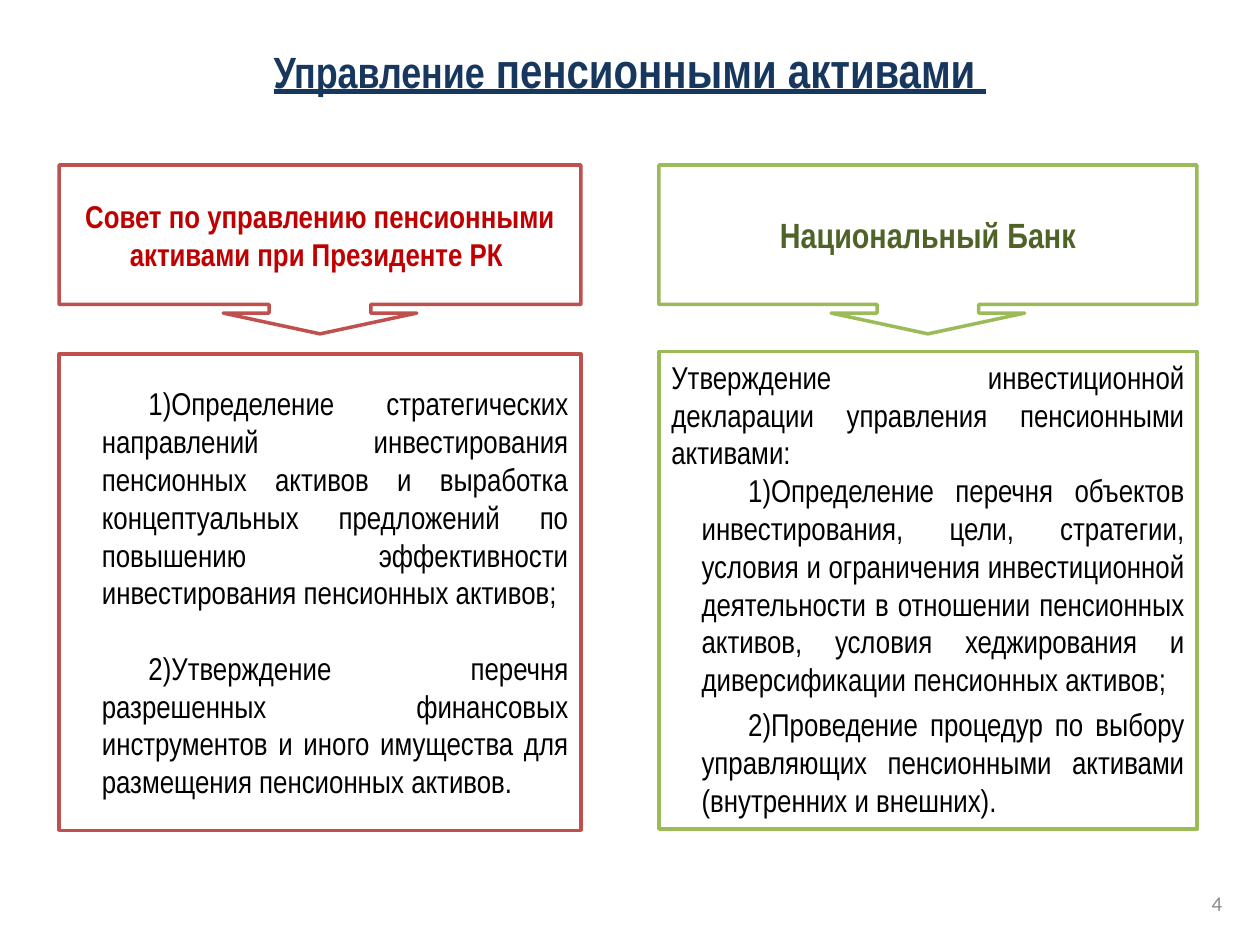
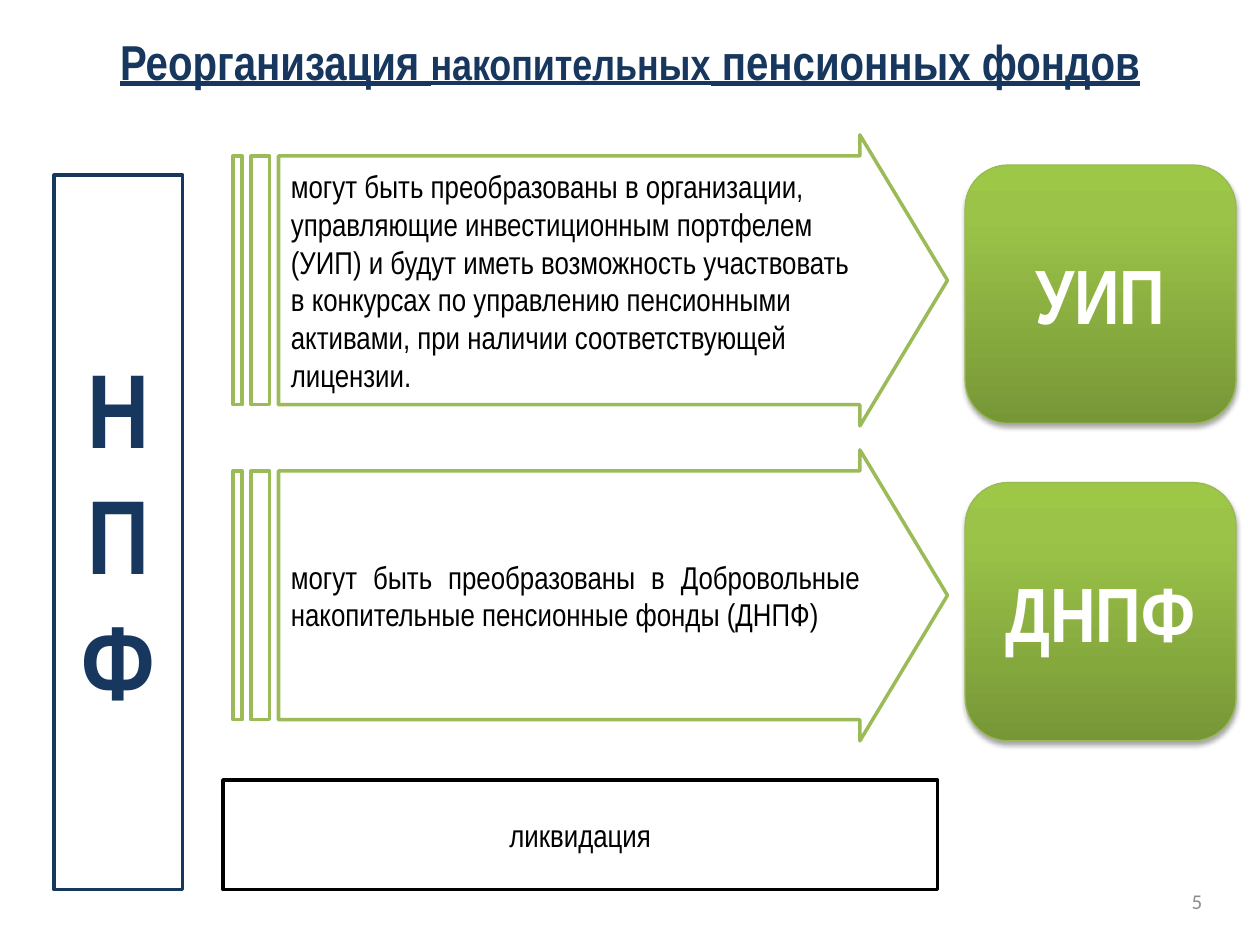
from collections import namedtuple
from dataclasses import dataclass

from lxml.etree import SubElement
from pptx import Presentation
from pptx.dml.color import RGBColor
from pptx.enum.shapes import MSO_SHAPE
from pptx.enum.text import MSO_ANCHOR, MSO_AUTO_SIZE, PP_ALIGN
from pptx.oxml import parse_xml
from pptx.oxml.ns import nsdecls, qn
from pptx.util import Inches, Pt

Box = namedtuple("Box", "left top width height")


@dataclass(frozen=True)
class Theme:
    font: str = "Arial Narrow"
    number_font: str = "Calibri"
    navy: str = "17375E"
    red: str = "C0504D"
    dark_red: str = "C00000"
    green: str = "9BBB59"
    dark_green: str = "4F6228"
    badge_edge: str = "98B955"
    badge_stops: tuple = ((0, "779737"), (80, "9BC348"), (100, "9DC746"))
    black: str = "000000"
    white: str = "FFFFFF"
    gray: str = "8C8C8C"
    title: float = 28
    title_small: float = 25
    body: float = 18
    heading: float = 20
    badge: float = 44
    fund: float = 60
    number: float = 12
    outline: float = 2


THEME = Theme()


def rgb(code):
    return RGBColor.from_string(code)


def inches(box):
    return [Inches(length) for length in box]


def style(paragraph, size, color, bold=False, align=PP_ALIGN.CENTER, font=THEME.font):
    paragraph.alignment = align
    paragraph.font.name = font
    paragraph.font.size = Pt(size)
    paragraph.font.bold = bold
    paragraph.font.color.rgb = rgb(color)


def add_panel(slide, kind, box, edge, adjustments=(), weight=THEME.outline):
    """Add a white outlined shape with no shadow."""
    panel = slide.shapes.add_shape(kind, *inches(box))
    for index, value in enumerate(adjustments):
        panel.adjustments[index] = value
    panel.shadow.inherit = False
    panel.fill.solid()
    panel.fill.fore_color.rgb = rgb(THEME.white)
    panel.line.color.rgb = rgb(edge)
    panel.line.width = Pt(weight)
    panel.text_frame.word_wrap = True
    panel.text_frame.vertical_anchor = MSO_ANCHOR.MIDDLE
    return panel


def write(panel, text, size, color, **options):
    paragraph = panel.text_frame.paragraphs[0]
    paragraph.text = text
    style(paragraph, size, color, **options)


def number_item(paragraph):
    properties = paragraph._p.get_or_add_pPr()
    properties.set("marL", str(Inches(0.24)))
    properties.set("indent", str(Inches(0.37)))
    SubElement(properties, qn("a:buFont"), typeface="+mj-lt")
    SubElement(properties, qn("a:buAutoNum"), type="arabicParenR")


def add_title(slide, box, parts):
    """Fill the title with (text, size) parts."""
    title = slide.shapes.title
    title.left, title.top, title.width, title.height = inches(box)
    title.text_frame.vertical_anchor = MSO_ANCHOR.MIDDLE
    paragraph = title.text_frame.paragraphs[0]
    style(paragraph, THEME.title, THEME.navy, bold=True)
    paragraph.font.underline = True
    for text, size in parts:
        run = paragraph.add_run()
        run.text = text
        run.font.size = Pt(size)


def add_page_number(slide, left, top, number):
    holder = slide.shapes.add_textbox(*inches(Box(left, top, 2.33, 0.4)))
    holder.text_frame.word_wrap = True
    holder.text_frame.vertical_anchor = MSO_ANCHOR.MIDDLE
    write(holder, str(number), THEME.number, THEME.gray,
          align=PP_ALIGN.RIGHT, font=THEME.number_font)


def add_duties(slide, box, edge, duties, gap, intro=None):
    """Add a frame with an optional opening line and numbered duties."""
    panel = add_panel(slide, MSO_SHAPE.RECTANGLE, box, edge)
    frame = panel.text_frame
    if intro:
        frame.vertical_anchor = MSO_ANCHOR.TOP
        frame.auto_size = MSO_AUTO_SIZE.SHAPE_TO_FIT_TEXT
    lines = ([intro] if intro else []) + duties
    for index, text in enumerate(lines):
        paragraph = frame.paragraphs[0] if index == 0 else frame.add_paragraph()
        paragraph.text = text
        style(paragraph, THEME.body, THEME.black, align=PP_ALIGN.JUSTIFY)
        if text in duties:
            if text != duties[-1]:
                paragraph.space_after = Pt(gap)
            number_item(paragraph)


def add_authority(slide, box, edge, name, name_size, name_color, duties_top, **duties):
    """Add a callout with the authority's name above the frame of its duties."""
    add_duties(slide, Box(box.left, box.top + duties_top, box.width,
                          box.height - duties_top), edge, **duties)
    callout = add_panel(slide, MSO_SHAPE.DOWN_ARROW_CALLOUT, box._replace(height=1.34),
                        edge, (0.602, 0.573, 0.123, 0.826))
    write(callout, name, name_size, name_color, bold=True)


def add_badge(slide, box, text):
    badge = add_panel(slide, MSO_SHAPE.ROUNDED_RECTANGLE, box, THEME.badge_edge, weight=0.75)
    stops = "".join(f'<a:gs pos="{position * 1000}"><a:srgbClr val="{color}"/></a:gs>'
                    for position, color in THEME.badge_stops)
    gradient = parse_xml(f'<a:gradFill {nsdecls("a")} rotWithShape="1"><a:gsLst>{stops}</a:gsLst>'
                         '<a:lin ang="16200000" scaled="0"/></a:gradFill>')
    properties = badge._element.spPr
    properties.replace(properties.find(qn("a:solidFill")), gradient)
    shadow = SubElement(properties.find(qn("a:effectLst")), qn("a:outerShdw"),
                        blurRad=str(Pt(3.1)), dist=str(Pt(1.8)), dir="5400000", rotWithShape="0")
    color = SubElement(shadow, qn("a:srgbClr"), val=THEME.black)
    SubElement(color, qn("a:alpha"), val="35000")
    write(badge, text, THEME.badge, THEME.white, bold=True)


def add_outcome(slide, box, text, align, badge_text, badge_drop):
    """Add a striped arrow that leads to a badge on its right."""
    arrow = add_panel(slide, MSO_SHAPE.STRIPED_RIGHT_ARROW, box._replace(width=5.67),
                      THEME.green, (0.855, 0.301))
    write(arrow, text, THEME.body, THEME.black, align=align)
    badge_width = 2.15
    add_badge(slide, Box(box.left + box.width - badge_width, box.top + badge_drop,
                         badge_width, 2.05), badge_text)


def build_management(slide):
    add_title(slide, Box(0.5, 0.2, 9, 0.7),
              [("Управление", THEME.title_small), (" пенсионными активами ", THEME.title)])
    add_authority(
        slide, Box(0.47, 1.31, 4.14, 5.28), THEME.red,
        "Совет по управлению пенсионными активами при Президенте РК ",
        THEME.body, THEME.dark_red, duties_top=1.5, gap=21.5,
        duties=["Определение стратегических направлений инвестирования пенсионных активов "
                "и выработка концептуальных предложений по повышению эффективности "
                "инвестирования пенсионных активов;",
                "Утверждение перечня разрешенных финансовых инструментов и иного имущества "
                "для размещения пенсионных активов."])
    add_authority(
        slide, Box(5.23, 1.31, 4.27, 5.27), THEME.green, "Национальный Банк",
        THEME.heading, THEME.dark_green, duties_top=1.48, gap=4,
        intro="Утверждение инвестиционной декларации управления пенсионными активами:",
        duties=["Определение перечня объектов инвестирования, цели, стратегии, условия и "
                "ограничения инвестиционной деятельности в отношении пенсионных активов, "
                "условия хеджирования и диверсификации пенсионных активов;",
                "Проведение процедур по выбору управляющих пенсионными активами "
                "(внутренних и внешних)."])
    add_page_number(slide, 7.47, 6.97, 4)


def build_reorganization(slide):
    add_title(slide, Box(0.5, 0.13, 9, 0.71),
              [("Реорганизация ", THEME.title), ("накопительных", THEME.title_small),
               (" пенсионных фондов", THEME.title)])
    funds = add_panel(slide, MSO_SHAPE.RECTANGLE, Box(0.43, 1.39, 1.02, 5.67), THEME.navy)
    write(funds, "НПФ", THEME.fund, THEME.navy, bold=True)
    outcomes = [
        ("могут быть преобразованы в организации, управляющие инвестиционным портфелем (УИП) "
         "и будут иметь возможность участвовать в конкурсах по управлению пенсионными "
         "активами, при наличии соответствующей лицензии.", PP_ALIGN.LEFT, "УИП", 0.24),
        ("могут быть преобразованы в Добровольные накопительные пенсионные фонды (ДНПФ)",
         PP_ALIGN.JUSTIFY, "ДНПФ", 0.26),
    ]
    for row, outcome in enumerate(outcomes):
        add_outcome(slide, Box(1.85, 1.07 + 2.5 * row, 7.96, 2.31), *outcome)
    liquidation = add_panel(slide, MSO_SHAPE.RECTANGLE, Box(1.77, 6.19, 5.67, 0.87), THEME.black)
    write(liquidation, "ликвидация", THEME.body, THEME.black)
    add_page_number(slide, 7.31, 6.95, 5)


def main():
    deck = Presentation()
    deck.slide_width, deck.slide_height = Inches(10), Inches(7.5)
    title_only = deck.slide_layouts[5]
    for build in (build_management, build_reorganization):
        build(deck.slides.add_slide(title_only))
    deck.save("out.pptx")


if __name__ == "__main__":
    main()
